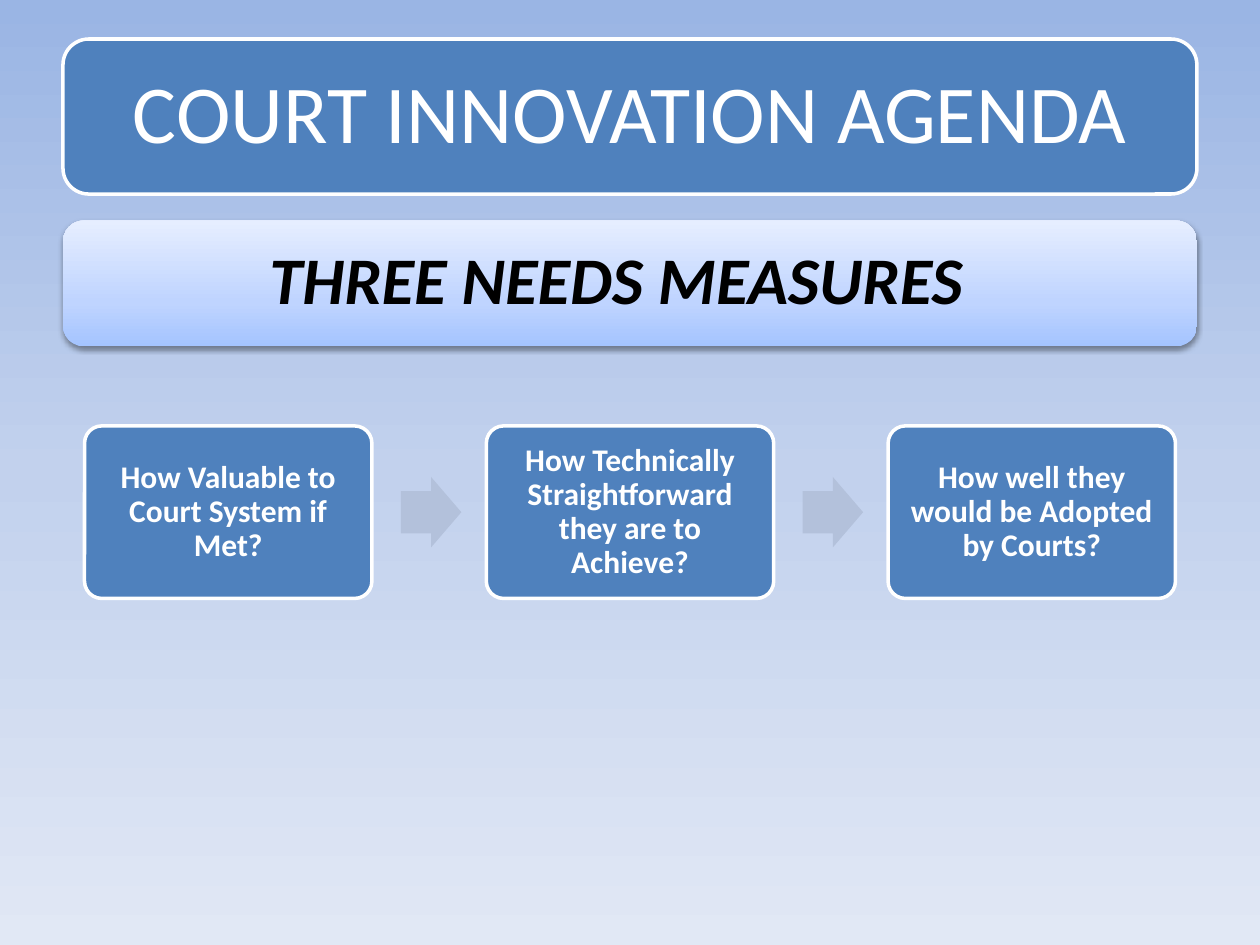
from dataclasses import dataclass

from lxml.etree import SubElement
from pptx import Presentation
from pptx.dml.color import RGBColor
from pptx.enum.shapes import MSO_SHAPE as Shape
from pptx.enum.text import MSO_ANCHOR as Anchor, MSO_AUTO_SIZE as AutoSize, PP_ALIGN as Align
from pptx.oxml.ns import qn
from pptx.util import Pt


@dataclass(frozen=True)
class Theme:
    font: str = "Calibri"
    box: str = "4F81BD"
    arrow: str = "B3C1DB"
    light: str = "FFFFFF"
    dark: str = "000000"
    background: tuple = ((0, "9AB5E4"), (50, "C2D1ED"), (100, "E1E8F5"))
    band: tuple = ((0, "A4C4FF"), (35, "BFD4FF"), (100, "E6EEFF"))
    title_size: int = 47
    band_size: int = 38
    step_size: int = 18


@dataclass(frozen=True)
class Box:
    left: float
    top: float
    width: float
    height: float

    def lengths(self) -> tuple:
        return Pt(self.left), Pt(self.top), Pt(self.width), Pt(self.height)


THEME = Theme()
SLIDE_W, SLIDE_H = 720, 540
BANNER = Box(36, 22.3, 648, 88.6)
BAND = Box(36, 126, 648, 72)
STEP_W, STEP_H, STEP_TOP, STEP_PITCH = 164.2, 98.6, 243.4, 229.6
ARROW_W, ARROW_H, ARROW_GAP = 34.6, 40.3, 16.5
STEPS = (
    "How Valuable to Court System if Met?",
    "How Technically Straightforward they are to Achieve?",
    "How well they would be Adopted by Courts?",
)


def set_gradient(fill, element, stops: tuple, angle: int) -> None:
    """Give fill, held in element, any number of stops; angle runs clockwise."""
    fill.gradient()
    grad = element.find(".//" + qn("a:gradFill"))
    gs_list = grad.find(qn("a:gsLst"))
    for old in list(gs_list):
        gs_list.remove(old)
    for position, color in stops:
        gs = SubElement(gs_list, qn("a:gs"), pos=str(position * 1000))
        SubElement(gs, qn("a:srgbClr"), val=color)
    grad.find(qn("a:lin")).set("ang", str(angle * 60000))


def add_soft_shadow(sp) -> None:
    effects = sp._element.spPr.find(qn("a:effectLst"))
    shadow = SubElement(effects, qn("a:outerShdw"), blurRad=str(Pt(3.1)),
                        dist=str(Pt(1.6)), dir="5400000", rotWithShape="0")
    color = SubElement(shadow, qn("a:srgbClr"), val=THEME.dark)
    SubElement(color, qn("a:alpha"), val="38000")


def add_shape(slide, kind: Shape, box: Box, color: str | None = None,
              outlined: bool = False, adjust: tuple = ()):
    sp = slide.shapes.add_shape(kind, *box.lengths())
    sp.shadow.inherit = False
    for i, value in enumerate(adjust):
        sp.adjustments[i] = value
    if color:
        sp.fill.solid()
        sp.fill.fore_color.rgb = RGBColor.from_string(color)
    if outlined:
        sp.line.color.rgb = RGBColor.from_string(THEME.light)
        sp.line.width = Pt(2)
    else:
        sp.line.fill.background()
    return sp


def write(sp, text: str, *, size: int, color: str = THEME.light, bold: bool = False,
          italic: bool = False, align: Align = Align.LEFT, inset: float = 5,
          indent: float = 0) -> None:
    """Fill sp with one paragraph; indent is added to the left inset."""
    tf = sp.text_frame
    tf.word_wrap = True
    tf.auto_size = AutoSize.NONE
    tf.vertical_anchor = Anchor.MIDDLE
    tf.margin_left = Pt(inset + indent)
    tf.margin_top = tf.margin_right = tf.margin_bottom = Pt(inset)
    p = tf.paragraphs[0]
    p.alignment = align
    p.line_spacing = 0.9
    r = p.add_run()
    r.text = text
    r.font.name = THEME.font
    r.font.size = Pt(size)
    r.font.bold = bold
    r.font.italic = italic
    r.font.color.rgb = RGBColor.from_string(color)


def add_title(slide) -> None:
    add_shape(slide, Shape.ROUNDED_RECTANGLE, BANNER, THEME.box, outlined=True)
    title = slide.shapes.title
    title.left, title.top, title.width, title.height = BANNER.lengths()
    write(title, "COURT INNOVATION AGENDA", size=THEME.title_size, inset=18.7, indent=21.3)
    slide.shapes._spTree.append(title._element)  # in front of the banner


def add_band(slide) -> None:
    sp = add_shape(slide, Shape.ROUNDED_RECTANGLE, BAND)
    set_gradient(sp.fill, sp._element.spPr, THEME.band, 270)
    add_soft_shadow(sp)
    write(sp, "THREE NEEDS MEASURES", size=THEME.band_size, color=THEME.dark,
          bold=True, italic=True, inset=11.5, indent=103)


def add_steps(slide) -> None:
    first_left = (SLIDE_W - STEP_W - (len(STEPS) - 1) * STEP_PITCH) / 2
    arrow_top = STEP_TOP + (STEP_H - ARROW_H) / 2
    for i, text in enumerate(STEPS):
        left = first_left + i * STEP_PITCH
        sp = add_shape(slide, Shape.ROUNDED_RECTANGLE, Box(left, STEP_TOP, STEP_W, STEP_H),
                       THEME.box, outlined=True, adjust=(0.1,))
        write(sp, text, size=THEME.step_size, bold=True, align=Align.CENTER)
        if i < len(STEPS) - 1:
            arrow = Box(left + STEP_W + ARROW_GAP, arrow_top, ARROW_W, ARROW_H)
            add_shape(slide, Shape.RIGHT_ARROW, arrow, THEME.arrow, adjust=(0.6, 0.5))


def main() -> None:
    prs = Presentation()
    prs.slide_width, prs.slide_height = Pt(SLIDE_W), Pt(SLIDE_H)
    slide = prs.slides.add_slide(prs.slide_layouts[5])
    set_gradient(slide.background.fill, slide._element, THEME.background, 90)
    add_title(slide)
    add_band(slide)
    add_steps(slide)
    prs.save("out.pptx")


if __name__ == "__main__":
    main()
